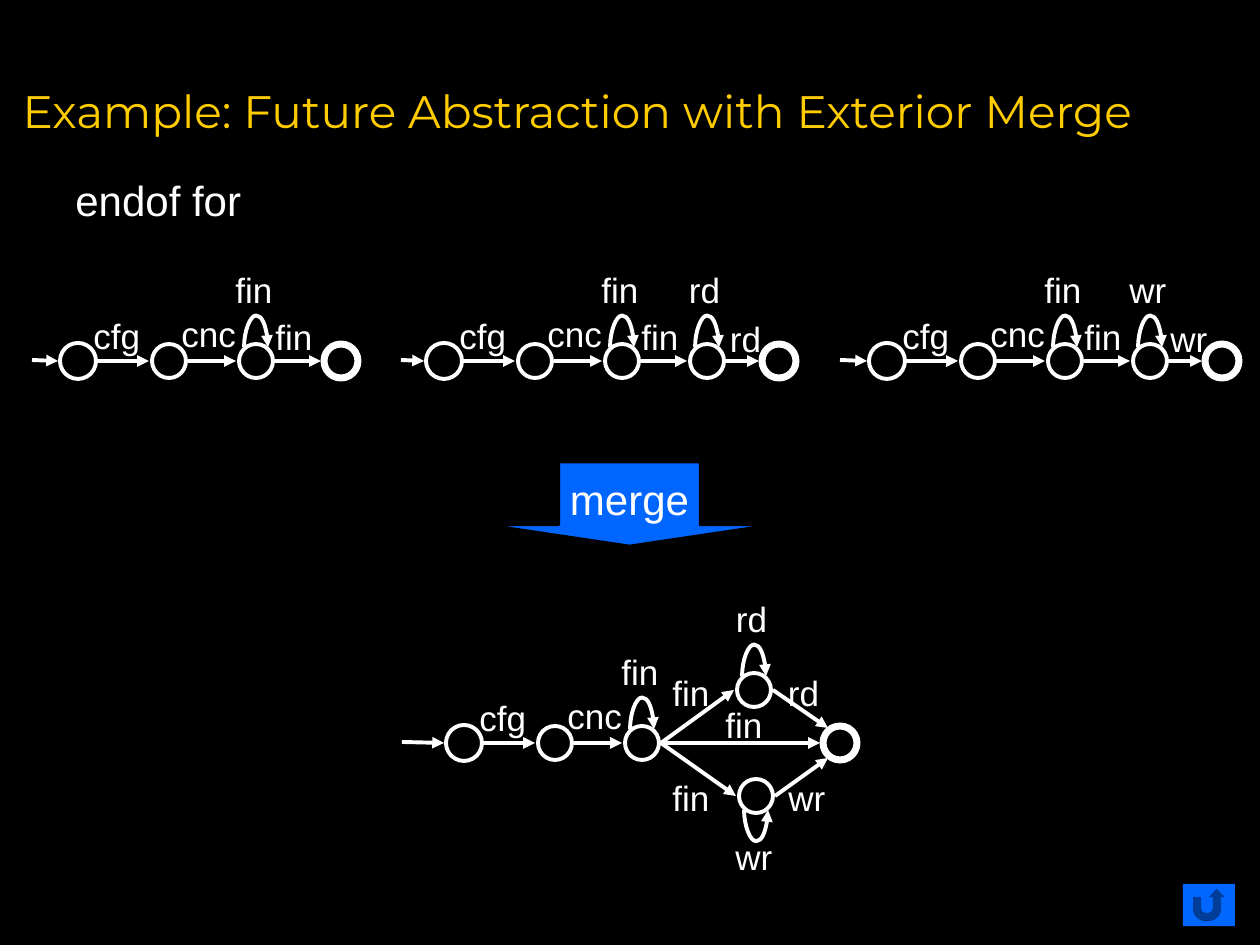
from pptx import Presentation
from pptx import util as u
from pptx.dml.color import RGBColor
from pptx.enum import shapes, text
from pptx.oxml.ns import qn
from lxml import etree

PX = 914400 / 126
BLACK = RGBColor(0, 0, 0)
WHITE = RGBColor(0xFF, 0xFF, 0xFF)
GOLD = RGBColor(0xFF, 0xCC, 0x00)
BLUE = RGBColor(0x00, 0x66, 0xFF)

TITLE = "Example: Future Abstraction with Exterior Merge"

# Label box widths in px
WIDTHS = {"cfg": 72, "cnc": 82, "fin": 62, "rd": 57, "wr": 62}

# Offsets from a machine's first state: states, edges with label centres,
# loops as (state, label, side) where side -1 is above and 1 is below
ROW = [(0, 0), (91, 0), (178, 0), (263, 0), (335, 0)]
EDGES = [(0, 1, "cfg", 39, -26), (1, 2, "cnc", 132, -28), (2, 3, "fin", 216, -25)]
LOOP = (2, "fin", -1)


def chain(x, entry, name):
    """A row of five states whose last two share one label."""
    return dict(at=(x, 361), entry=entry, states=ROW,
                edges=EDGES + [(3, 4, name, 302, -23)],
                loops=[LOOP, (3, name, -1)])


MACHINES = [
    dict(at=(78, 361), entry=46, states=ROW[:4], edges=EDGES, loops=[LOOP]),
    chain(444, 43, "rd"),
    chain(887, 47, "wr"),
    dict(at=(464, 743), entry=62,
         states=ROW[:3] + [(290, -53), (292, 53), (376, 0)],
         edges=EDGES[:2] + [
             (2, 3, "fin", 227, -51), (3, 5, "rd", 340, -51),
             (2, 4, "fin", 227, 54), (4, 5, "wr", 343, 54),
             (2, 5, "fin", 280, -19)],
         loops=[LOOP, (3, "rd", -1), (4, "wr", 1)]),
]


def px(*vals):
    return [u.Emu(round(v * PX)) for v in vals]


def style(frame, size, color=WHITE, font="Arial"):
    for run in frame.paragraphs[0].runs:
        run.font.size = u.Pt(size)
        run.font.name = font
        run.font.color.rgb = color


def label(group, words, x, y):
    """Text centred on a point."""
    w = WIDTHS[words]
    frame = group.shapes.add_textbox(*px(x - w / 2, y - 27, w, 54)).text_frame
    frame.word_wrap = False
    frame.auto_size = text.MSO_AUTO_SIZE.SHAPE_TO_FIT_TEXT
    frame.text = words
    style(frame, 20)


def arrow(group, ends, kind=shapes.MSO_CONNECTOR.STRAIGHT):
    line = group.shapes.add_connector(kind, *ends)
    line.line.color.rgb = WHITE
    line.line.width = u.Pt(2.25)
    etree.SubElement(line.line._get_or_add_ln(), qn("a:tailEnd"), type="triangle")
    etree.SubElement(line._element.spPr, qn("a:effectLst"))
    return line


def loop(group, x, y, side):
    """A thin curved connector turned on its side, bulging away from the state."""
    left, top, foot = px(x, y - 12, y + 12)
    props = arrow(group, (left, top, left + 1588, foot),
                  shapes.MSO_CONNECTOR.CURVE)._element.spPr
    box = props.find(qn("a:xfrm"))
    box.set("rot", "5400000" if side < 0 else "16200000")
    box.set("flipV" if side < 0 else "flipH", "1")
    geom = props.find(qn("a:prstGeom"))
    guides = geom.find(qn("a:avLst"))
    if guides is None:
        guides = etree.SubElement(geom, qn("a:avLst"))
    etree.SubElement(guides, qn("a:gd"), name="adj1", fmla=f"val {side * 15800000}")


def draw(slide, at, entry, states, edges, loops):
    group = slide.shapes.add_group_shape()
    spots = [(at[0] + x, at[1] + y) for x, y in states]

    # States: the first is a little larger, the last has a heavy outline
    for i, (x, y) in enumerate(spots):
        d = 36 if i == 0 else 34
        ring = group.shapes.add_shape(shapes.MSO_SHAPE.OVAL,
                                      *px(x - d / 2, y - d / 2, d, d))
        ring.shadow.inherit = False
        ring.fill.background()
        ring.line.color.rgb = WHITE
        ring.line.width = u.Pt(4 if i == len(spots) - 1 else 2.25)

    # Entry arrow and transitions
    x, y = at
    arrow(group, px(x - entry, y - 1, x - 20, y))
    for a, b, words, dx, dy in edges:
        (x1, y1), (x2, y2) = spots[a], spots[b]
        end = (x2 - 20, y2)
        if y1 != y and y2 == y:
            end = (x2 - 12, y2 + (15 if y1 > y else -15))
        arrow(group, px(x1 + 19, y1, *end))
        label(group, words, x + dx, y + dy)

    # Self loops
    for a, words, side in loops:
        x, y = spots[a]
        loop(group, x, y + 14 * side, side)
        label(group, words, x - 2, y + (60 if side > 0 else -72))


def main():
    deck = Presentation()
    deck.slide_width, deck.slide_height = px(1260, 945)
    slide = deck.slides.add_slide(deck.slide_layouts[5])
    slide.background.fill.solid()
    slide.background.fill.fore_color.rgb = BLACK

    # Title
    title = slide.shapes.title
    title.left, title.top, title.width, title.height = px(10, 31, 1247, 158)
    frame = title.text_frame
    frame.text = TITLE
    frame.auto_size = text.MSO_AUTO_SIZE.NONE
    frame.vertical_anchor = text.MSO_ANCHOR.MIDDLE
    frame.paragraphs[0].alignment = text.PP_ALIGN.LEFT
    style(frame, 26, GOLD, "Montserrat")

    # Subtitle
    frame = slide.shapes.add_textbox(*px(63, 168, 368, 63)).text_frame
    frame.word_wrap = True
    frame.text = "endof for"
    style(frame, 24)

    for machine in MACHINES:
        draw(slide, **machine)

    # Merge arrow
    merge = slide.shapes.add_shape(shapes.MSO_SHAPE.DOWN_ARROW,
                                   *px(488, 462, 283, 84))
    merge.shadow.inherit = False
    merge.adjustments[0], merge.adjustments[1] = 0.5, 0.25
    merge.fill.solid()
    merge.fill.fore_color.rgb = BLUE
    merge.line.color.rgb = BLACK
    merge.line.width = u.Pt(1.5)
    frame = merge.text_frame
    frame.word_wrap = False
    frame.text = "merge"
    frame.vertical_anchor = text.MSO_ANCHOR.MIDDLE
    frame.paragraphs[0].alignment = text.PP_ALIGN.CENTER
    style(frame, 24)

    # Return button
    back = slide.shapes.add_shape(shapes.MSO_SHAPE.ACTION_BUTTON_RETURN,
                                  *px(1183, 884, 52, 42))
    back.shadow.inherit = False
    back.fill.solid()
    back.fill.fore_color.rgb = BLUE
    back.line.fill.background()

    deck.save("out.pptx")


if __name__ == "__main__":
    main()
